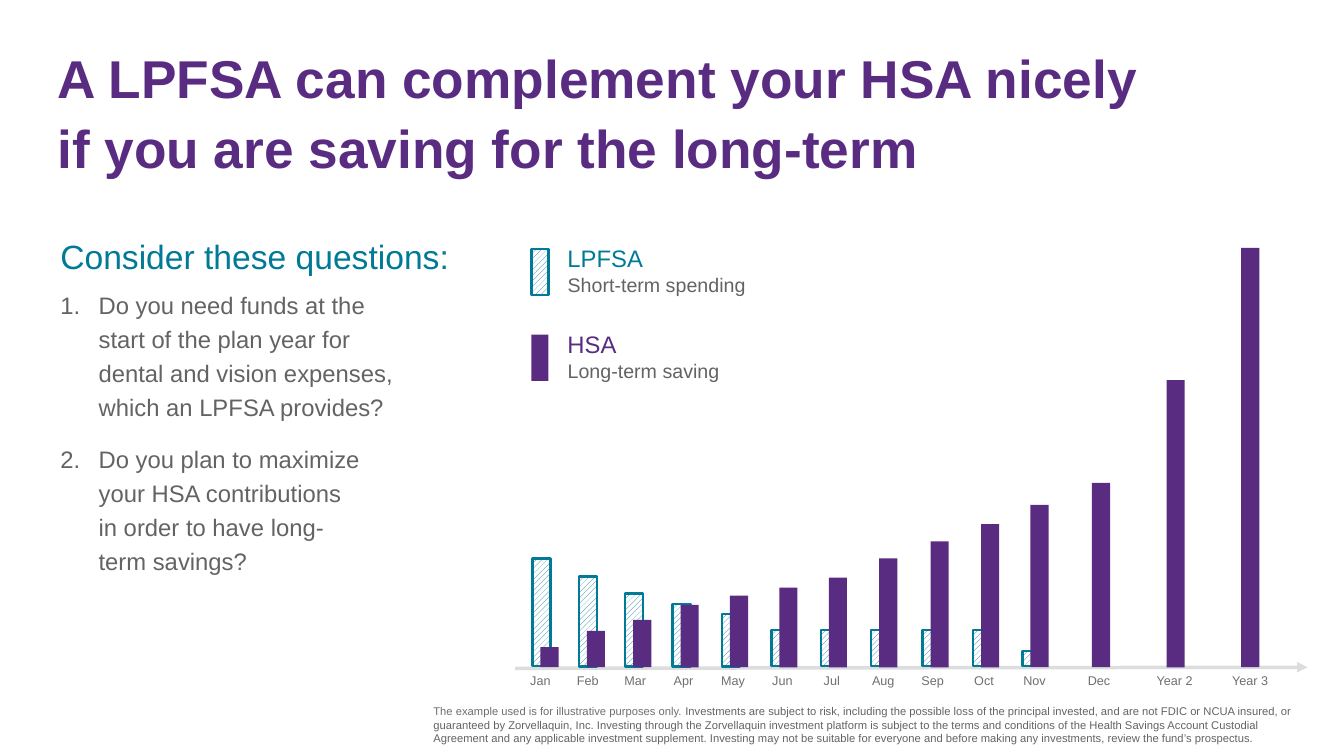
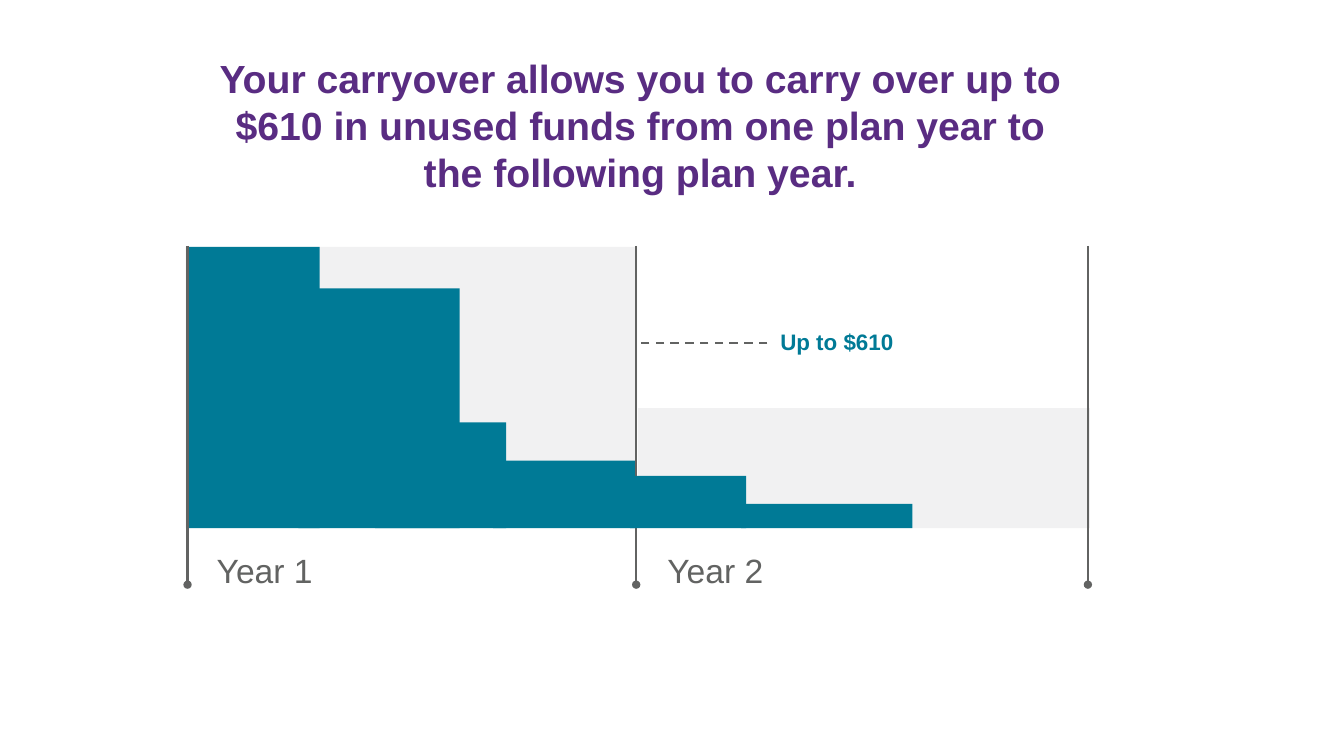
from dataclasses import dataclass
from typing import NamedTuple, Optional

from lxml import etree
from pptx import Presentation
from pptx import util as u
from pptx.dml.color import RGBColor
from pptx.enum import dml, shapes, text
from pptx.oxml import ns


@dataclass(frozen=True)
class Theme:
    font: str = "Arial"
    purple: str = "592C82"
    teal: str = "007A96"
    body: str = "626362"
    muted: str = "6F6F6F"
    axis: str = "DCDDDE"
    panel: str = "F1F1F2"
    white: str = "FFFFFF"
    headline: float = 38
    title: float = 28
    heading: float = 24
    copy: float = 17
    callout: float = 16
    legend_note: float = 14
    axis_label: float = 9
    fine_print: float = 8


THEME = Theme()


class Box(NamedTuple):
    left: float
    top: float
    width: float
    height: float

    def lengths(self) -> tuple:
        return tuple(u.Inches(value) for value in self)


class Run(NamedTuple):
    words: str
    size: float
    color: str
    bold: bool = False


@dataclass(frozen=True)
class Para:
    """Runs of one paragraph; a newline in a run is a line break."""
    runs: tuple
    align: text.PP_ALIGN = text.PP_ALIGN.LEFT
    line_spacing: float = 1.0
    space_after: float = 0
    numbered: bool = False


@dataclass(frozen=True)
class Period:
    name: str
    label_center: float
    hsa_left: float
    hsa_height: float
    lpfsa_height: float = 0


@dataclass(frozen=True)
class LegendEntry:
    name: str
    note: str
    color: str
    hatched: bool


@dataclass(frozen=True)
class PlanYear:
    name: str
    panel: Box
    label_left: float
    balances: tuple
    markers: tuple


PERIODS = (
    Period("Jan", 5.36, 5.36, 0.2, 1.07),
    Period("Feb", 5.83, 5.82, 0.36, 0.89),
    Period("Mar", 6.3, 6.28, 0.47, 0.72),
    Period("Apr", 6.78, 6.75, 0.62, 0.62),
    Period("May", 7.27, 7.24, 0.71, 0.52),
    Period("Jun", 7.76, 7.73, 0.79, 0.36),
    Period("Jul", 8.25, 8.22, 0.89, 0.36),
    Period("Aug", 8.76, 8.72, 1.08, 0.36),
    Period("Sep", 9.25, 9.23, 1.25, 0.36),
    Period("Oct", 9.76, 9.73, 1.42, 0.36),
    Period("Nov", 10.26, 10.22, 1.61, 0.15),
    Period("Dec", 10.9, 10.83, 1.83),
    Period("Year 2", 11.65, 11.57, 2.85),
    Period("Year 3", 12.4, 12.31, 4.16),
)
BAR_WIDTH, BAR_OVERLAP = 0.18, 0.08
HSA_BASE, LPFSA_BASE = 6.62, 6.61

LEGEND = (
    LegendEntry("LPFSA", "Short-term spending", THEME.teal, True),
    LegendEntry("HSA", "Long-term saving", THEME.purple, False),
)
LEGEND_TOP, LEGEND_STEP = 2.37, 0.85

QUESTIONS = (
    "Do you need funds at the\nstart of the plan year for\n"
    "dental and vision expenses,\nwhich an LPFSA provides?",
    "Do you plan to maximize\nyour HSA contributions\n"
    "in order to have long-\nterm savings?",
)
EXAMPLE_NOTE = "The example used is for illustrative purposes only. "
RISK_NOTE = (
    "Investments are subject to risk, including the possible loss of the principal "
    "invested, and are not FDIC or NCUA insured, or guaranteed by Zorvellaquin, Inc. "
    "Investing through the Zorvellaquin investment platform is subject to the terms and "
    "conditions of the Health Savings Account Custodial Agreement and any applicable "
    "investment supplement. Investing may not be suitable for everyone and before making "
    "any investments, review the fund’s prospectus."
)

FLOOR = 5.24
MARKER_TOP, MARKER_BOTTOM = 2.44, 5.8
# Each balance is (left, top, width) and reaches down to FLOOR.
PLAN_YEARS = (
    PlanYear("Year 1", Box(1.84, 2.45, 4.48, 2.79), 2.02,
             ((1.87, 2.45, 1.3), (2.96, 2.86, 1.6), (3.72, 4.19, 1.3), (4.89, 4.57, 1.41)),
             (1.86, 6.31)),
    PlanYear("Year 2", Box(6.33, 4.05, 4.48, 1.19), 6.49,
             ((6.25, 4.72, 1.15), (7.35, 5, 1.7)),
             (10.79,)),
)


def rgb(color: str) -> RGBColor:
    return RGBColor.from_string(color)


def number_paragraph(paragraph) -> None:
    props = paragraph._p.get_or_add_pPr()
    indent = u.Inches(0.38)
    props.set("marL", str(indent))
    props.set("indent", str(-indent))
    bullet = etree.SubElement(props, ns.qn("a:buAutoNum"))
    bullet.set("type", "arabicPeriod")


def add_run(paragraph, run: Run) -> None:
    for index, line in enumerate(run.words.split("\n")):
        if index:
            paragraph.add_line_break()
        piece = paragraph.add_run()
        piece.text = line
        piece.font.name = THEME.font
        piece.font.size = u.Pt(run.size)
        piece.font.bold = run.bold
        piece.font.color.rgb = rgb(run.color)


def add_text(slide, box: Box, *paras: Para, inset: Optional[float] = None,
             wrap: bool = True) -> None:
    frame = slide.shapes.add_textbox(*box.lengths()).text_frame
    frame.word_wrap = wrap
    if inset is not None:
        frame.margin_left = frame.margin_right = u.Inches(inset)
        frame.margin_top = frame.margin_bottom = u.Inches(inset)
    for index, para in enumerate(paras):
        paragraph = frame.add_paragraph() if index else frame.paragraphs[0]
        paragraph.alignment = para.align
        paragraph.line_spacing = para.line_spacing
        paragraph.space_after = u.Pt(para.space_after)
        if para.numbered:
            number_paragraph(paragraph)
        for run in para.runs:
            add_run(paragraph, run)


def add_bar(slide, box: Box, color: str, hatched: bool = False) -> None:
    bar = slide.shapes.add_shape(shapes.MSO_SHAPE.RECTANGLE, *box.lengths())
    bar.shadow.inherit = False
    if hatched:
        bar.fill.patterned()
        bar.fill.pattern = dml.MSO_PATTERN.WIDE_UPWARD_DIAGONAL
        bar.fill.fore_color.rgb = rgb(color)
        bar.fill.back_color.rgb = rgb(THEME.white)
        bar.line.color.rgb = rgb(color)
        bar.line.width = u.Pt(1.75)
    else:
        bar.fill.solid()
        bar.fill.fore_color.rgb = rgb(color)
        bar.line.fill.background()


def add_line(slide, start: tuple, end: tuple, color: str, width: float = 1.5,
             end_mark: Optional[str] = None, dashed: bool = False) -> None:
    points = (u.Inches(value) for value in (*start, *end))
    connector = slide.shapes.add_connector(shapes.MSO_CONNECTOR.STRAIGHT, *points)
    connector.line.color.rgb = rgb(color)
    connector.line.width = u.Pt(width)
    if dashed:
        connector.line.dash_style = dml.MSO_LINE.DASH
    props = connector._element.spPr
    if end_mark:
        mark = etree.SubElement(props.find(ns.qn("a:ln")), ns.qn("a:tailEnd"))
        mark.set("type", end_mark)
    etree.SubElement(props, ns.qn("a:effectLst"))


def add_savings_chart(slide) -> None:
    add_line(slide, (5.11, 6.63), (12.97, 6.62), THEME.axis, 2.5, "triangle")
    for period in PERIODS:
        add_text(slide, Box(period.label_center - 0.32, 6.63, 0.64, 0.3),
                 Para((Run(period.name, THEME.axis_label, THEME.muted),),
                      text.PP_ALIGN.CENTER))
        if period.lpfsa_height:
            add_bar(slide, Box(period.hsa_left - BAR_OVERLAP,
                               LPFSA_BASE - period.lpfsa_height,
                               BAR_WIDTH, period.lpfsa_height), THEME.teal, True)
        add_bar(slide, Box(period.hsa_left, HSA_BASE - period.hsa_height,
                           BAR_WIDTH, period.hsa_height), THEME.purple)


def add_legend(slide) -> None:
    for index, entry in enumerate(LEGEND):
        top = LEGEND_TOP + index * LEGEND_STEP
        add_bar(slide, Box(5.27, top + 0.1, 0.17, 0.46), entry.color, entry.hatched)
        add_text(slide, Box(5.53, top, 0.96, 0.39),
                 Para((Run(entry.name, THEME.copy, entry.color),)), wrap=False)
        add_text(slide, Box(5.5, top + 0.22, 3.39, 0.5),
                 Para((Run(entry.note, THEME.legend_note, THEME.body),)), inset=0.13)


def build_savings_slide(slide) -> None:
    headline = "A LPFSA can complement your HSA nicely\nif you are saving for the long-term"
    add_text(slide, Box(0.47, 0.34, 11.41, 2.06),
             Para((Run(headline, THEME.headline, THEME.purple, True),), line_spacing=1.1))
    heading = Para((Run("Consider these questions:", THEME.heading, THEME.teal),),
                   space_after=6)
    questions = [Para((Run(question, THEME.copy, THEME.body),), line_spacing=1.2,
                      space_after=12, numbered=True) for question in QUESTIONS]
    add_text(slide, Box(0.5, 2.29, 4.16, 4.18), heading, *questions)
    add_savings_chart(slide)
    add_legend(slide)
    add_text(slide, Box(4.2, 6.94, 8.86, 0.56),
             Para((Run(EXAMPLE_NOTE, THEME.fine_print, THEME.muted),
                   Run(RISK_NOTE, THEME.fine_print, THEME.body))))


def build_carryover_slide(slide) -> None:
    title = ("Your carryover allows you to carry over up to $610 in unused funds "
             "from one plan year to the following plan year.")
    add_text(slide, Box(2, 0.44, 8.7, 1.62),
             Para((Run(title, THEME.title, THEME.purple, True),), text.PP_ALIGN.CENTER),
             inset=0.1)
    for year in PLAN_YEARS:
        add_bar(slide, year.panel, THEME.panel)
        add_text(slide, Box(year.label_left, 5.33, 4, 0.67),
                 Para((Run(year.name, THEME.heading, THEME.body),)), inset=0.13)
        for left, top, width in year.balances:
            add_bar(slide, Box(left, top, width, FLOOR - top), THEME.teal)
        for x in year.markers:
            add_line(slide, (x, MARKER_TOP), (x, MARKER_BOTTOM), THEME.body, end_mark="oval")
    add_line(slide, (7.61, 3.4), (6.31, 3.4), THEME.body, dashed=True)
    add_text(slide, Box(7.61, 3.13, 3.1, 0.54),
             Para((Run("Up to $610", THEME.callout, THEME.teal, True),)), inset=0.13)


def main() -> None:
    deck = Presentation()
    deck.slide_width, deck.slide_height = u.Inches(13.33), u.Inches(7.5)
    blank = deck.slide_layouts[6]
    for build in (build_savings_slide, build_carryover_slide):
        build(deck.slides.add_slide(blank))
    deck.save("out.pptx")


if __name__ == "__main__":
    main()
